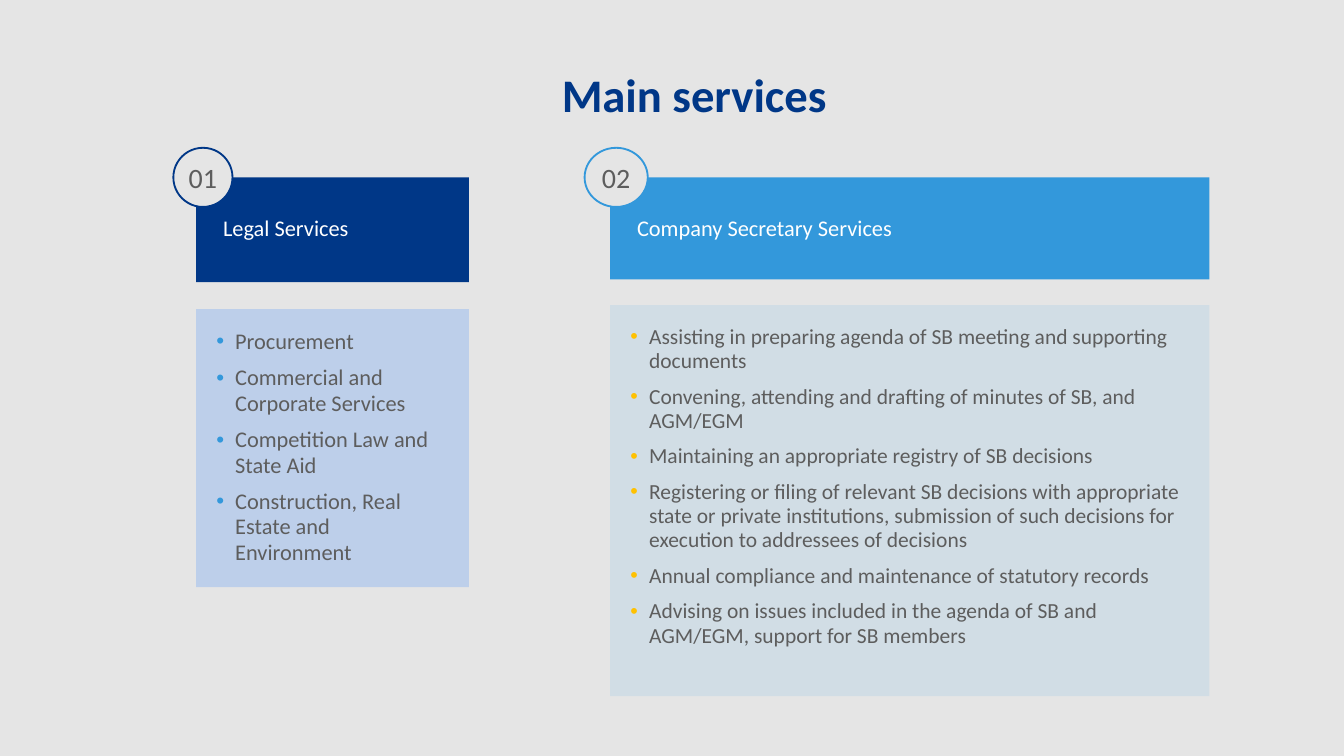
from dataclasses import dataclass

import pptx
import pptx.oxml
import pptx.oxml.ns
import pptx.util
from pptx.dml.color import RGBColor
from pptx.enum.shapes import MSO_SHAPE
from pptx.enum.text import MSO_ANCHOR, PP_ALIGN
from pptx.util import Inches

FONT = "Calibri"
BACKGROUND = RGBColor(0xE5, 0xE5, 0xE5)
NAVY = RGBColor(0x00, 0x37, 0x87)
BLUE = RGBColor(0x33, 0x98, 0xDB)
YELLOW = RGBColor(0xFF, 0xC1, 0x01)
GREY = RGBColor(0x5D, 0x5D, 0x5D)
WHITE = RGBColor(0xFF, 0xFF, 0xFF)
BRIGHT_TINT = RGBColor(0x1E, 0x7A, 0xFF)
PALE_TINT = RGBColor(0x85, 0xC1, 0xE9)

HEADER_TOP = 1.32
BADGE_TOP = 1.1
BADGE_HEIGHT = 0.44
BULLET_INDENT = 0.14
TINT_OPACITY = 20


@dataclass
class Service:
    number: str
    name: str
    left: float
    width: float
    header_height: float
    body_top: float
    body_height: float
    badge_left: float
    badge_width: float
    color: RGBColor
    tint: RGBColor
    bullet_color: RGBColor
    text_size: float
    items: list[str]


SERVICES = [
    Service("01", "Legal Services", 1.46, 2.03, 0.78, 2.3, 2.07, 1.29, 0.44,
            NAVY, BRIGHT_TINT, BLUE, 12, [
                "Procurement",
                "Commercial and Corporate Services",
                "Competition Law and State Aid",
                "Construction, Real Estate and Environment",
            ]),
    Service("02", "Company Secretary Services", 4.54, 4.46, 0.76, 2.27, 2.91, 4.35, 0.47,
            BLUE, PALE_TINT, YELLOW, 11.5, [
                "Assisting in preparing agenda of SB meeting and supporting documents",
                "Convening, attending and drafting of minutes of SB, and AGM/EGM",
                "Maintaining an appropriate registry of SB decisions",
                "Registering or filing of relevant SB decisions with appropriate state or "
                "private institutions, submission of such decisions for execution to "
                "addressees of decisions",
                "Annual compliance and maintenance of statutory records",
                "Advising on issues included in the agenda of SB and AGM/EGM, "
                "support for SB members",
            ]),
]


def add_run(paragraph, text: str, size: float, color: RGBColor, bold: bool = False) -> None:
    run = paragraph.add_run()
    run.text = text
    run.font.name = FONT
    run.font.size = pptx.util.Pt(size)
    run.font.bold = bold
    run.font.color.rgb = color


def add_block(slide, kind: MSO_SHAPE, left: float, top: float, width: float, height: float,
              fill: RGBColor, side: float, edge: float, anchor: MSO_ANCHOR):
    """Add a filled shape without outline, with side and top/bottom insets."""
    shape = slide.shapes.add_shape(
        kind, Inches(left), Inches(top), Inches(width), Inches(height))
    shape.shadow.inherit = False
    shape.fill.solid()
    shape.fill.fore_color.rgb = fill
    shape.line.fill.background()
    frame = shape.text_frame
    frame.word_wrap = True
    frame.margin_left = frame.margin_right = Inches(side)
    frame.margin_top = frame.margin_bottom = Inches(edge)
    frame.vertical_anchor = anchor
    return shape


def set_opacity(shape, percent: int) -> None:
    color = shape.element.spPr.find(".//" + pptx.oxml.ns.qn("a:srgbClr"))
    color.append(pptx.oxml.parse_xml(
        f'<a:alpha {pptx.oxml.ns.nsdecls("a")} val="{percent * 1000}"/>'))


def add_bullet(paragraph, color: RGBColor) -> None:
    properties = paragraph._p.get_or_add_pPr()
    properties.set("marL", str(Inches(BULLET_INDENT)))
    properties.set("indent", str(-Inches(BULLET_INDENT)))
    namespace = pptx.oxml.ns.nsdecls("a")
    for xml in (f'<a:buClr {namespace}><a:srgbClr val="{color}"/></a:buClr>',
                f'<a:buFont {namespace} typeface="Arial"/>',
                f'<a:buChar {namespace} char="•"/>'):
        properties.append(pptx.oxml.parse_xml(xml))


def add_title(slide, text: str) -> None:
    box = slide.shapes.add_textbox(Inches(1.11), Inches(0.49), Inches(8.11), Inches(0.58))
    box.text_frame.word_wrap = True
    paragraph = box.text_frame.paragraphs[0]
    paragraph.alignment = PP_ALIGN.CENTER
    paragraph.line_spacing = 0.9
    add_run(paragraph, text, 25, NAVY, bold=True)


def add_service(slide, service: Service) -> None:
    # Tinted panel with the bullet list
    body = add_block(slide, MSO_SHAPE.RECTANGLE, service.left, service.body_top, service.width,
                     service.body_height, service.tint, 0.15, 0.15, MSO_ANCHOR.TOP)
    set_opacity(body, TINT_OPACITY)
    frame = body.text_frame
    for index, item in enumerate(service.items):
        paragraph = frame.add_paragraph() if index else frame.paragraphs[0]
        add_bullet(paragraph, service.bullet_color)
        paragraph.alignment = PP_ALIGN.LEFT
        paragraph.line_spacing = 0.94
        paragraph.space_after = pptx.util.Pt(6)
        add_run(paragraph, item, service.text_size, GREY)

    # Header band
    header = add_block(slide, MSO_SHAPE.RECTANGLE, service.left, HEADER_TOP, service.width,
                       service.header_height, service.color, 0.2, 0.27, MSO_ANCHOR.TOP)
    paragraph = header.text_frame.paragraphs[0]
    paragraph.alignment = PP_ALIGN.LEFT
    add_run(paragraph, service.name, 12, WHITE)

    # Number badge
    badge = add_block(slide, MSO_SHAPE.OVAL, service.badge_left, BADGE_TOP, service.badge_width,
                      BADGE_HEIGHT, BACKGROUND, 0.1, 0.05, MSO_ANCHOR.MIDDLE)
    badge.line.color.rgb = service.color
    badge.line.width = pptx.util.Pt(1)
    badge.text_frame.word_wrap = False
    paragraph = badge.text_frame.paragraphs[0]
    paragraph.alignment = PP_ALIGN.CENTER
    add_run(paragraph, service.number, 15, GREY)


def main() -> None:
    presentation = pptx.Presentation()
    # Widescreen, 16:9
    presentation.slide_width = Inches(10)
    presentation.slide_height = Inches(10 * 9 / 16)
    slide = presentation.slides.add_slide(presentation.slide_layouts[6])
    slide.background.fill.solid()
    slide.background.fill.fore_color.rgb = BACKGROUND

    add_title(slide, "Main services")
    for service in SERVICES:
        add_service(slide, service)
    presentation.save("out.pptx")


if __name__ == "__main__":
    main()
